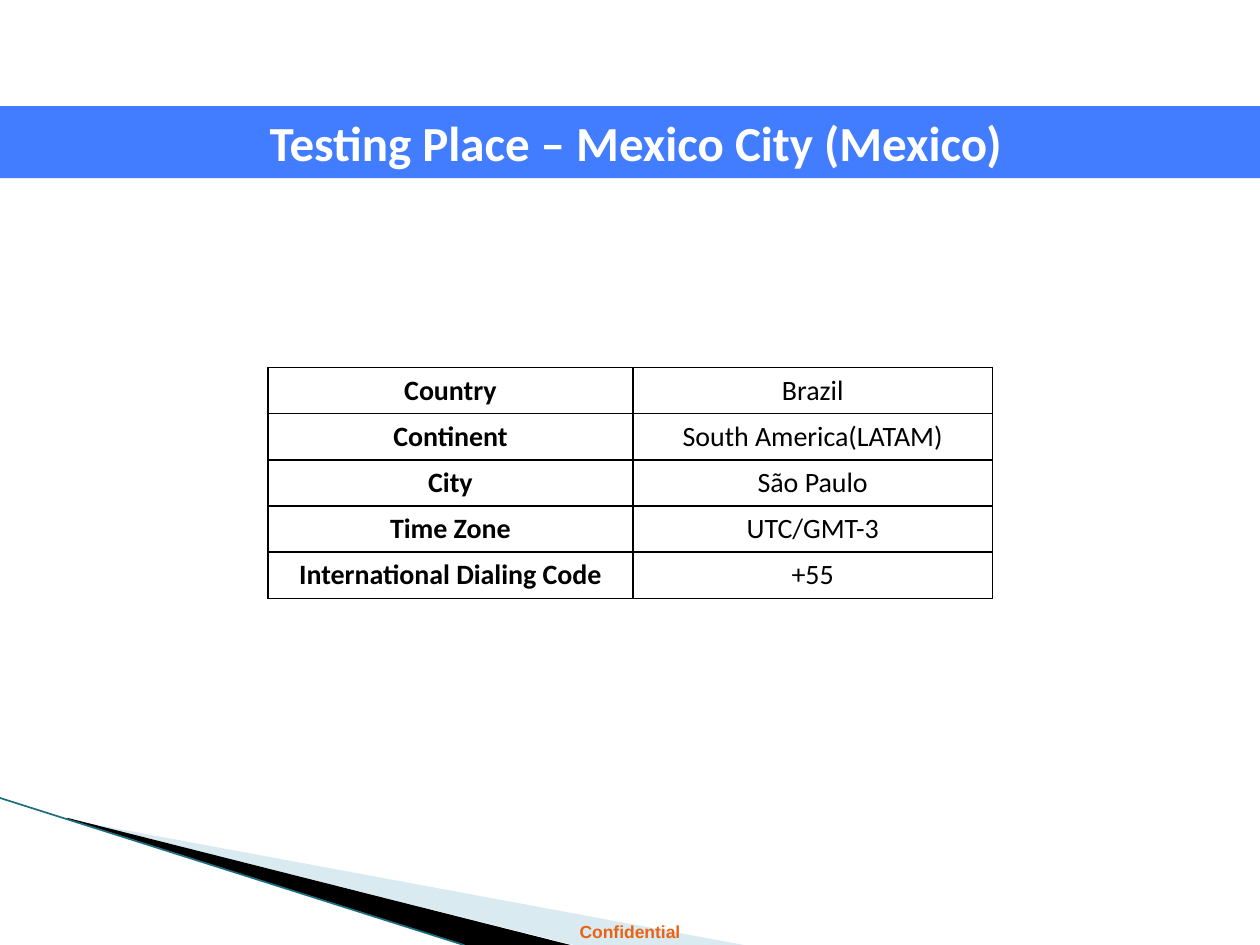
from lxml.etree import SubElement
from pptx import Presentation
from pptx.dml.color import RGBColor
from pptx.enum.shapes import MSO_CONNECTOR as Connector, MSO_SHAPE as Shape
from pptx.enum.text import MSO_ANCHOR as Anchor, PP_ALIGN as Align
from pptx.oxml.ns import qn
from pptx.util import Pt


def color(code):
    return RGBColor.from_string(code)


def write(frame, text, size=16, font="Calibri", ink="000000", bold=True):
    frame.word_wrap = True
    para = frame.paragraphs[0]
    para.alignment = Align.CENTER
    span = para.add_run()
    span.text = text
    span.font.size = Pt(size)
    span.font.name = font
    span.font.bold = bold
    span.font.color.rgb = color(ink)


deck = Presentation()
deck.slide_width, deck.slide_height = Pt(720), Pt(540)
page = deck.slides.add_slide(deck.slide_layouts[6])

wedges = [
    ("A0CBDC", 40, [(39.6, 468.5), (425, 540), (328, 540), (39.6, 468)]),
    ("000000", 100, [(38.2, 467.3), (326, 540), (266, 540), (38.9, 468)]),
]
for fill, opacity, points in wedges:
    corners = [(Pt(x), Pt(y)) for x, y in points]
    builder = page.shapes.build_freeform(*corners[0])
    builder.add_line_segments(corners[1:])
    wedge = builder.convert_to_shape()
    wedge.shadow.inherit = False
    wedge.fill.solid()
    wedge.fill.fore_color.rgb = color(fill)
    wedge.line.fill.background()
    if opacity < 100:
        tint = wedge.fill._xPr.find(qn("a:solidFill"))[0]
        SubElement(tint, qn("a:alpha"), val=str(opacity * 1000))

edge = page.shapes.add_connector(Connector.STRAIGHT, Pt(0), Pt(456), Pt(265), Pt(540))
edge.line.color.rgb = color("1B6E80")
edge.line.width = Pt(0.95)
SubElement(edge._element.spPr, qn("a:effectLst"))

footer = page.shapes.add_textbox(Pt(0), Pt(522.7), Pt(720), Pt(19.4))
write(footer.text_frame, "Confidential", size=10, font="Arial", ink="EB6312")

banner = page.shapes.add_shape(Shape.RECTANGLE, Pt(0), Pt(60.7), Pt(720), Pt(41.2))
banner.shadow.inherit = False
banner.fill.solid()
banner.fill.fore_color.rgb = color("437DFF")
banner.line.fill.background()
banner.text_frame.vertical_anchor = Anchor.MIDDLE
write(banner.text_frame, " Testing Place – Mexico City (Mexico)", size=28, ink="FFFFFF")

facts = [
    ("Country", "Brazil"),
    ("Continent", "South America(LATAM)"),
    ("City", "São Paulo"),
    ("Time Zone", "UTC/GMT-3"),
    ("International Dialing Code", "+55"),
]
row_height = 26.4
table = page.shapes.add_table(
    len(facts), 2, Pt(153), Pt(210), Pt(414), Pt(row_height * len(facts))
).table
table.first_row = table.horz_banding = False
table.columns[0].width, table.columns[1].width = Pt(208.8), Pt(205.2)
for row, fact in enumerate(facts):
    table.rows[row].height = Pt(row_height)
    for column, text in enumerate(fact):
        cell = table.cell(row, column)
        cell.vertical_anchor = Anchor.MIDDLE
        cell.margin_top = cell.margin_bottom = Pt(0)
        write(cell.text_frame, text, bold=column == 0)
        props = cell._tc.get_or_add_tcPr()
        for side in ("lnL", "lnR", "lnT", "lnB"):
            border = SubElement(props, qn(f"a:{side}"), w=str(Pt(1)))
            paint = SubElement(border, qn("a:solidFill"))
            SubElement(paint, qn("a:srgbClr"), val="000000")
        cell.fill.background()

deck.save("out.pptx")
